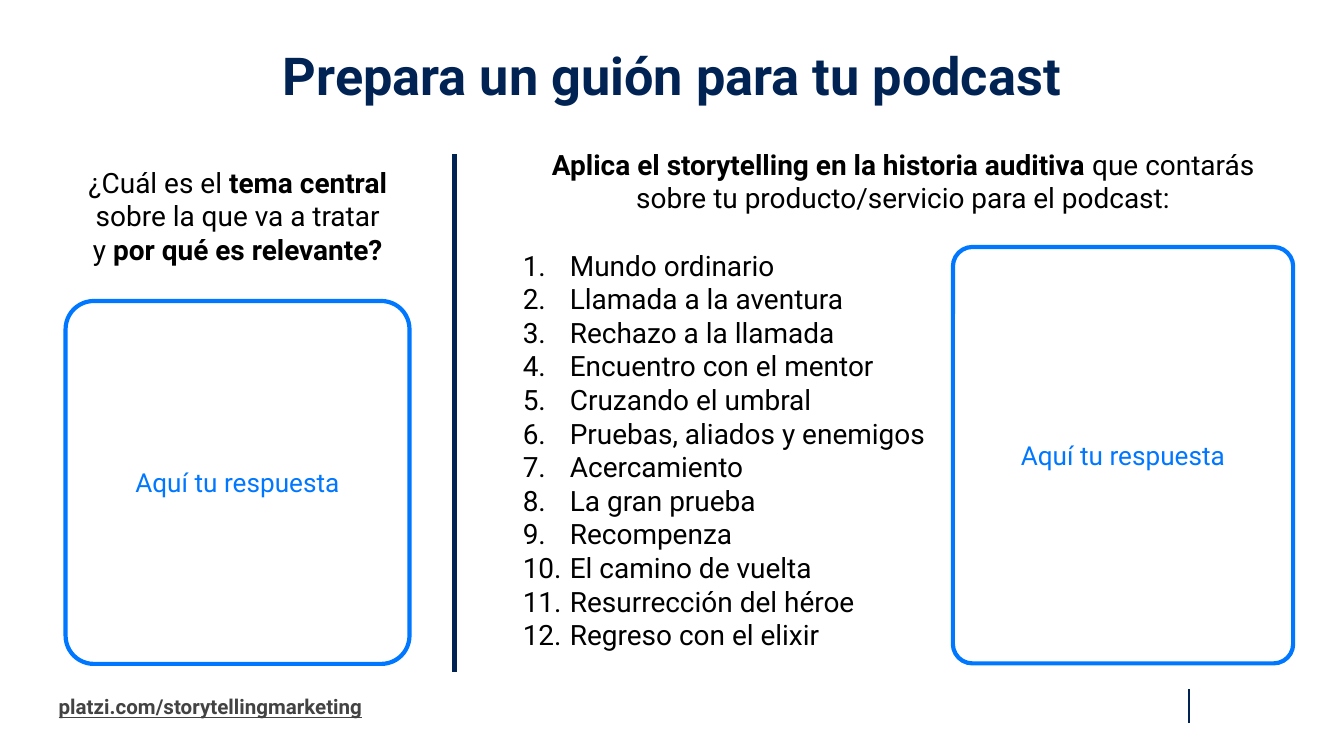
from lxml import etree
from pptx import Presentation
from pptx import util as u
from pptx.dml.color import RGBColor
from pptx.enum import shapes, text
from pptx.oxml import ns

COLORS = {"navy": "012354", "blue": "0077FF", "ink": "000000", "gray": "434343"}
FONT = "Roboto"
STAGES = [
    "Mundo ordinario", "Llamada a la aventura", "Rechazo a la llamada",
    "Encuentro con el mentor", "Cruzando el umbral", "Pruebas, aliados y enemigos",
    "Acercamiento", "La gran prueba", "Recompenza", "El camino de vuelta",
    "Resurrección del héroe", "Regreso con el elixir",
]


def color(name):
    return RGBColor.from_string(COLORS[name])


def place(shape, box):
    shape.left, shape.top, shape.width, shape.height = map(u.Cm, box)


def set_frame(shape, anchor=text.MSO_ANCHOR.MIDDLE):
    frame = shape.text_frame
    frame.word_wrap = True
    frame.auto_size = text.MSO_AUTO_SIZE.NONE
    frame.vertical_anchor = anchor
    frame.margin_left = frame.margin_right = u.Cm(0.25)
    frame.margin_top = frame.margin_bottom = u.Cm(0.25)
    return frame


def style(paragraph, size, ink, align=text.PP_ALIGN.CENTER, bold=False):
    paragraph.alignment = align
    paragraph.space_before = u.Pt(0)
    font = paragraph.font
    font.name, font.size, font.bold = FONT, u.Pt(size), bold
    font.color.rgb = color(ink)


def add_line(slide, x, top, bottom, width):
    line = slide.shapes.add_connector(
        shapes.MSO_CONNECTOR.STRAIGHT, u.Cm(x), u.Cm(top), u.Cm(x), u.Cm(bottom))
    line.line.color.rgb = color("navy")
    line.line.width = u.Pt(width)
    etree.SubElement(line._element.spPr, ns.qn("a:effectLst"))


def number(paragraph):
    properties = paragraph._p.get_or_add_pPr()
    properties.set("marL", str(u.Cm(1.27)))
    properties.set("indent", str(-u.Cm(0.89)))
    bullet_color = etree.SubElement(properties, ns.qn("a:buClr"))
    etree.SubElement(bullet_color, ns.qn("a:srgbClr"), val=COLORS["ink"])
    etree.SubElement(properties, ns.qn("a:buFont"), typeface=FONT)
    etree.SubElement(properties, ns.qn("a:buAutoNum"), type="arabicPeriod")


def fill_title(title, box):
    place(title, box)
    paragraph = set_frame(title, text.MSO_ANCHOR.TOP).paragraphs[0]
    paragraph.text = "Prepara un guión para tu podcast"
    paragraph.line_spacing = 0.8
    style(paragraph, 28, "navy", bold=True)


def fill_prompt(prompt, box, lines):
    """Each line is a list of (words, bold) pairs."""
    place(prompt, box)
    paragraph = set_frame(prompt).paragraphs[0]
    for i, pieces in enumerate(lines):
        if i:
            paragraph.add_line_break()
        for words, bold in pieces:
            run = paragraph.add_run()
            run.text, run.font.bold = words, bold
    style(paragraph, 15, "ink")


def fill_stages(stages, box):
    place(stages, box)
    frame = set_frame(stages)
    frame.text = "\n".join(STAGES)
    for paragraph in frame.paragraphs:
        number(paragraph)
        style(paragraph, 15, "ink", text.PP_ALIGN.LEFT)


def add_answer(slide, box, rounding):
    answer = slide.shapes.add_shape(
        shapes.MSO_SHAPE.ROUNDED_RECTANGLE, *map(u.Cm, box))
    answer.adjustments[0] = rounding
    answer.shadow.inherit = False
    answer.fill.background()
    answer.line.color.rgb = color("blue")
    answer.line.width = u.Pt(2.25)
    paragraph = set_frame(answer).paragraphs[0]
    paragraph.text = "Aquí tu respuesta"
    style(paragraph, 14, "blue")


def add_footer(slide, box):
    left, top, width, height = box
    address = slide.shapes.add_textbox(*map(u.Cm, (left, top, 7.9, height)))
    paragraph = set_frame(address).paragraphs[0]
    paragraph.text = "platzi.com/storytellingmarketing"
    style(paragraph, 11, "gray", text.PP_ALIGN.LEFT, bold=True)
    paragraph.font.underline = True
    add_line(slide, left + width - 2.06, top + 0.1, top + 0.74, 1.5)


def main():
    deck = Presentation()
    deck.slide_width, deck.slide_height = u.Cm(25.4), u.Cm(14.29)
    slide = deck.slides.add_slide(deck.slide_layouts.get_by_name("Comparison"))
    title, topic, stages, story, spare = slide.placeholders
    spare._element.getparent().remove(spare._element)

    fill_title(title, (0.86, 0.79, 23.67, 1.6))

    # Left: central topic
    fill_prompt(topic, (1.37, 2.69, 6.25, 2.77), [
        [("¿Cuál es el ", False), ("tema central ", True),
         ("sobre la que va a tratar", False)],
        [("y ", False), ("por qué es relevante?", True)],
    ])
    add_answer(slide, (1.24, 5.69, 6.5, 6.86), 0.082)

    add_line(slide, 8.59, 2.92, 12.7, 2.25)

    # Right: story stages
    fill_prompt(story, (9.6, 2.62, 14.94, 1.6), [
        [("Aplica el storytelling en la historia auditiva", True),
         (" que contarás sobre tu producto/servicio para el podcast:", False)],
    ])
    fill_stages(stages, (9.25, 4.45, 8.76, 8.1))
    add_answer(slide, (18.01, 4.67, 6.43, 7.87), 0.057)

    add_footer(slide, (0.86, 12.93, 23.67, 0.86))
    deck.save("out.pptx")


if __name__ == "__main__":
    main()
